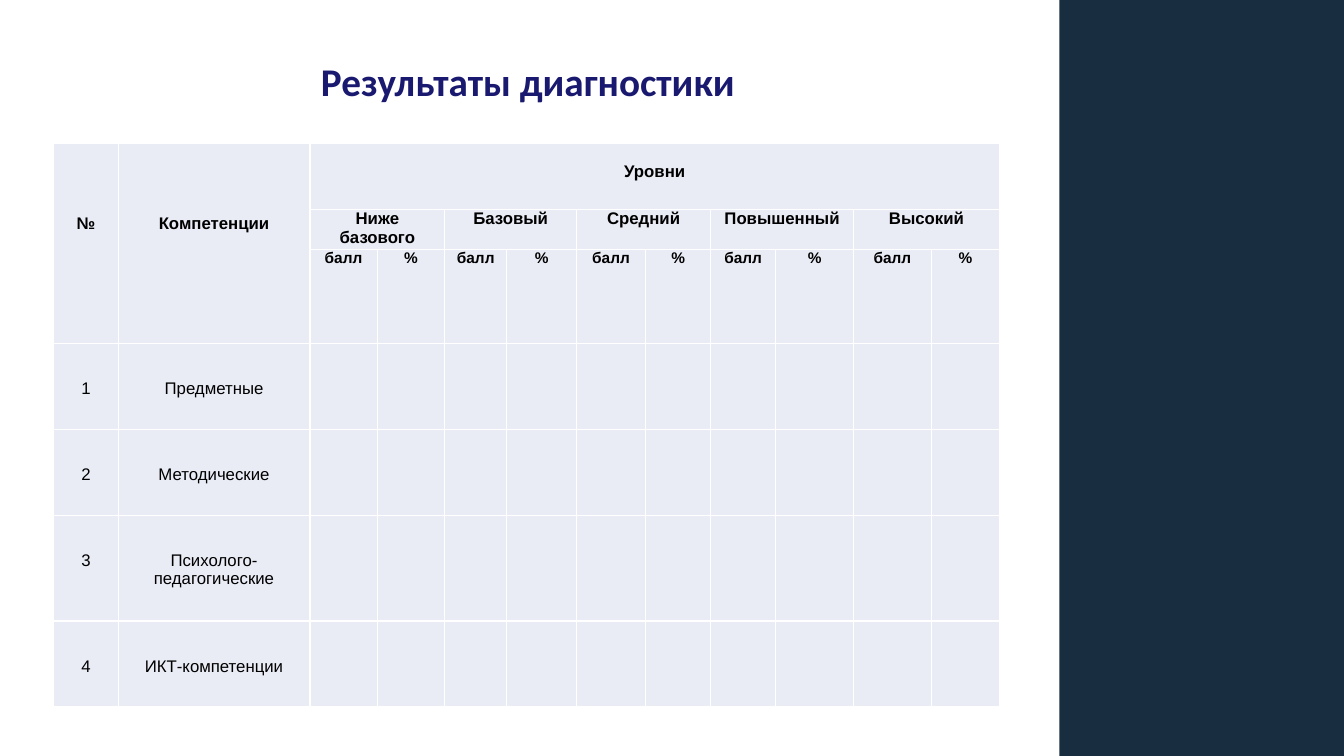
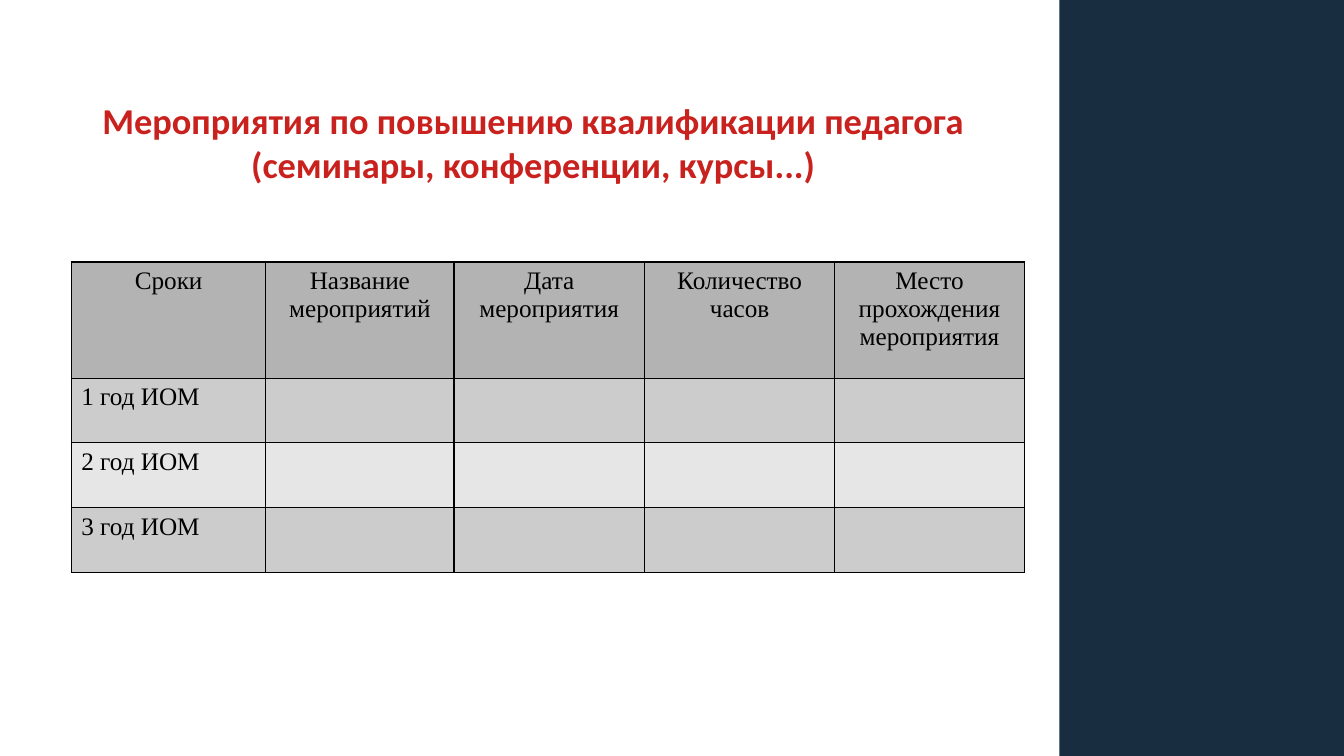
"""Two slides on teacher diagnostics and training, with shared title, band and table styles."""
from dataclasses import dataclass

from lxml import etree
from pptx import Presentation
from pptx.dml.color import RGBColor
from pptx.enum import shapes, text
from pptx.oxml import ns
from pptx.util import Cm, Pt


@dataclass(frozen=True)
class Theme:
    band: str = "182D40"
    navy: str = "191970"
    red: str = "C9211E"
    ink: str = "000000"
    white: str = "FFFFFF"
    pale: str = "E9EBF5"
    dark: str = "B3B3B3"
    mid: str = "CCCCCC"
    light: str = "E6E6E6"
    head: str = "Calibri"
    sans: str = "Arial"
    serif: str = "Times New Roman"
    large: int = 28
    medium: int = 26
    body: int = 18
    small: int = 12
    tiny: int = 11


T = Theme()
WIDE, HIGH, EDGE = 33.87, 19.05, 26.7

LEVELS = ["Ниже базового", "Базовый", "Средний", "Повышенный", "Высокий"]
SKILLS = ["Предметные", "Методические", "Психолого-педагогические", "ИКТ-компетенции"]
HEADS = ["Сроки", "Название мероприятий", "Дата мероприятия",
         "Количество часов", "Место прохождения мероприятия"]
YEARS = ["1 год ИОМ", "2 год ИОМ", "3 год ИОМ"]

LEVEL_ROW = ["", ""] + [word for name in LEVELS for word in (name, "")]
UNIT_ROW = ["", ""] + ["балл", "%"] * len(LEVELS)
SKILL_ROWS = [[str(n), name] for n, name in enumerate(SKILLS, 1)]

HEAD_ROW = dict(fill=T.pale, size=T.small, bold=True, center=True)
SUB_ROW = dict(HEAD_ROW, top=0)
SKILL_ROW = dict(HEAD_ROW, bold=False, top=0.9)
YEAR_ROW = dict(size=T.body, bold=False, center=False, top=0.13)

SLIDES = [
    dict(
        title="Результаты диагностики", color=T.navy, size=T.large,
        box=(2.16, 0.51, 22.28, 3.05),
        at=(1.35, 3.61), font=T.sans, line=T.white, side=0.18,
        cols=[1.63, 4.83, 1.7, 1.7, 1.56, 1.76, 1.74, 1.64, 1.64, 1.96, 1.96, 1.72],
        rows=[1.67, 1.01, 2.37, 2.16, 2.16, 2.67, 2.16],
        cells=[["№", "Компетенции", "Уровни"], LEVEL_ROW, UNIT_ROW] + SKILL_ROWS,
        looks=[dict(HEAD_ROW, top=0.48), SUB_ROW, dict(SUB_ROW, size=T.tiny)]
        + [SKILL_ROW] * len(SKILLS),
        spans=[(0, 0, 2, 0), (0, 1, 2, 1), (0, 2, 0, 11)]
        + [(1, c, 1, c + 1) for c in range(2, 12, 2)],
        tall=1.78,
    ),
    dict(
        title="Мероприятия по повышению квалификации педагога\n"
              "(семинары, конференции, курсы...)",
        color=T.red, size=T.medium, box=(2.31, 1.5, 22.28, 4.16),
        at=(1.8, 6.6), font=T.serif, line=T.ink, side=0.25,
        cols=[4.9, 4.74, 4.8, 4.8, 4.77],
        rows=[2.93, 1.63, 1.63, 1.63],
        cells=[HEADS] + [[year] for year in YEARS],
        looks=[dict(YEAR_ROW, fill=T.dark, center=True)]
        + [dict(YEAR_ROW, fill=tone) for tone in (T.mid, T.light, T.mid)],
        spans=[], tall=0,
    ),
]


def tint(color):
    return RGBColor.from_string(color)


def style(frame, font, size, bold, color, center):
    for para in frame.paragraphs:
        para.alignment = text.PP_ALIGN.CENTER if center else text.PP_ALIGN.LEFT
        for run in para.runs:
            run.font.name, run.font.size, run.font.bold = font, Pt(size), bold
            run.font.color.rgb = tint(color)


def frame_cell(cell, color):
    props = cell._tc.get_or_add_tcPr()
    for side in ("lnL", "lnR", "lnT", "lnB"):
        line = etree.SubElement(props, ns.qn(f"a:{side}"), w=str(Pt(1)))
        fill = etree.SubElement(line, ns.qn("a:solidFill"))
        etree.SubElement(fill, ns.qn("a:srgbClr"), val=color)


def add_band(slide, layout):
    band = slide.shapes.add_shape(shapes.MSO_SHAPE.RECTANGLE, Cm(EDGE), 0,
                                  Cm(WIDE - EDGE), Cm(HIGH))
    band.shadow.inherit = False
    band.fill.solid()
    band.fill.fore_color.rgb = tint(T.band)
    band.line.fill.background()
    layout.shapes.element.insert(2, band.element)


def add_title(slide, data):
    title = slide.shapes.title
    title.left, title.top, title.width, title.height = map(Cm, data["box"])
    frame = title.text_frame
    frame.text = data["title"]
    frame.auto_size = text.MSO_AUTO_SIZE.NONE
    frame.vertical_anchor = text.MSO_ANCHOR.MIDDLE
    style(frame, T.head, data["size"], True, data["color"], True)


def add_grid(slide, data):
    rows, cols = data["rows"], data["cols"]
    left, top = data["at"]
    table = slide.shapes.add_table(len(rows), len(cols), Cm(left), Cm(top),
                                   Cm(sum(cols)), Cm(sum(rows))).table
    table.first_row = table.horz_banding = False
    for col, width in zip(table.columns, cols):
        col.width = Cm(width)
    for row, height, words, look in zip(table.rows, rows, data["cells"], data["looks"]):
        row.height = Cm(height)
        for c, cell in enumerate(row.cells):
            frame_cell(cell, data["line"])
            cell.fill.solid()
            cell.fill.fore_color.rgb = tint(look["fill"])
            cell.margin_left = cell.margin_right = Cm(data["side"])
            cell.margin_top, cell.margin_bottom = Cm(look["top"]), 0
            if c < len(words) and words[c]:
                cell.text_frame.text = words[c]
                style(cell.text_frame, data["font"], look["size"], look["bold"],
                      T.ink, look["center"])
    for r1, c1, r2, c2 in data["spans"]:
        cell = table.cell(r1, c1)
        cell.merge(table.cell(r2, c2))
        if r2 > r1:
            cell.margin_top = Cm(data["tall"])


def main():
    deck = Presentation()
    deck.slide_width, deck.slide_height = Cm(WIDE), Cm(HIGH)
    layout = deck.slide_layouts[5]
    for n, data in enumerate(SLIDES):
        slide = deck.slides.add_slide(layout)
        if n == 0:
            add_band(slide, layout)
        add_title(slide, data)
        add_grid(slide, data)
    deck.save("out.pptx")


if __name__ == "__main__":
    main()
